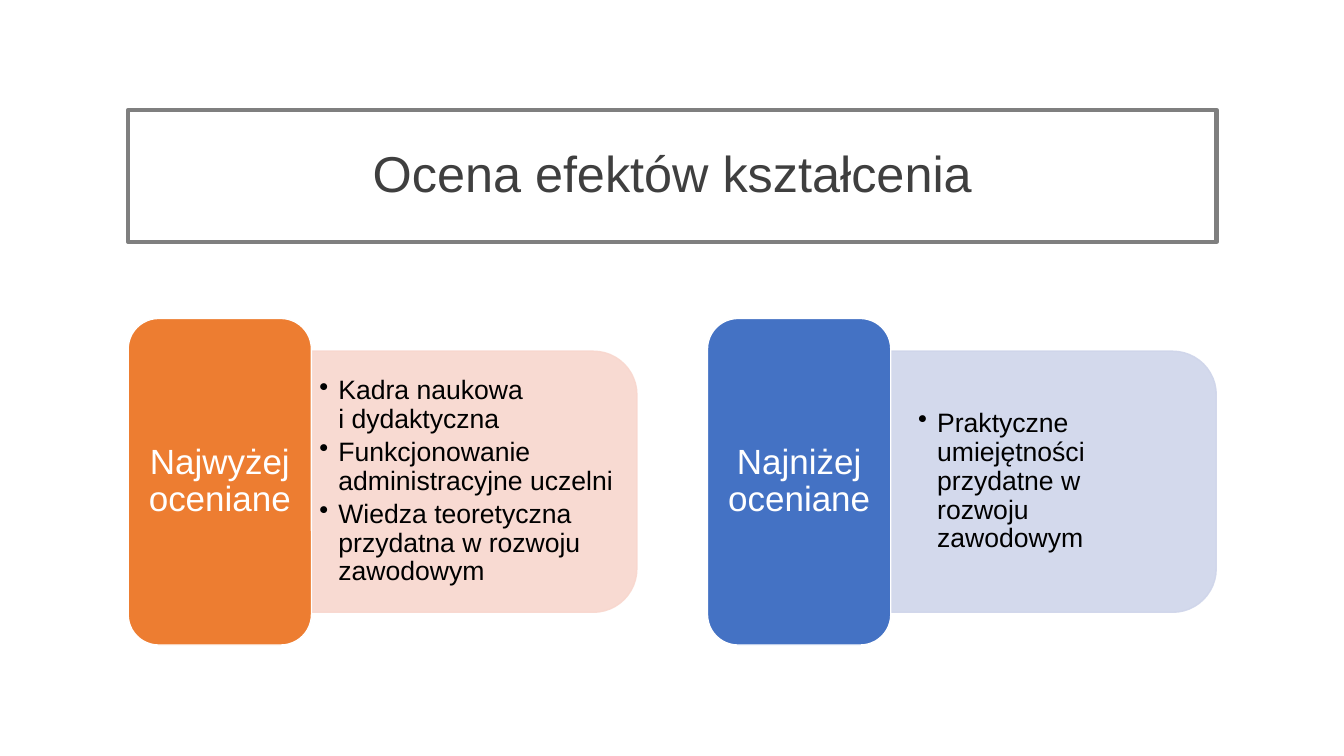
"""Build the slide that compares the highest and lowest rated learning outcomes."""
from lxml import etree
from pptx import Presentation
from pptx.dml.color import RGBColor
from pptx.enum.shapes import MSO_SHAPE
from pptx.enum.text import MSO_ANCHOR, PP_ALIGN
from pptx.oxml.ns import qn
from pptx.util import Cm, Pt

RECTANGLE = MSO_SHAPE.RECTANGLE
ROUNDED = MSO_SHAPE.ROUNDED_RECTANGLE
ROUNDED_TOP = MSO_SHAPE.ROUND_2_SAME_RECTANGLE
MIDDLE = MSO_ANCHOR.MIDDLE
LEFT, CENTER = PP_ALIGN.LEFT, PP_ALIGN.CENTER

TITLE = "Ocena efektów kształcenia"
CARDS = [
    {
        "label": "Najwyżej oceniane",
        "points": [
            "Kadra naukowa\vi dydaktyczna",
            "Funkcjonowanie administracyjne uczelni",
            "Wiedza teoretyczna przydatna w rozwoju zawodowym",
        ],
        "fill": "ED7D31", "tint": "F8D7CE", "inset": (0.2, 0.1),
    },
    {
        "label": "Najniżej oceniane",
        "points": ["Praktyczne umiejętności przydatne w rozwoju zawodowym"],
        "fill": "4472C4", "tint": "CFD5EA", "inset": (0.69, 0.36),
    },
]
THEME = {
    "font": "Arial", "white": "FFFFFF", "black": "000000",
    "title": "3F3F3F", "frame": "7F7F7F", "opacity": 90,
    "title_size": 36, "label_size": 25, "point_size": 19,
}
PAGE_WIDTH, PAGE_HEIGHT = 33.87, 19.05
MARGIN, CARD_STEP, CARD_MIDDLE = 3.23, 14.6, 12.14
TITLE_TOP, TITLE_WIDTH, TITLE_HEIGHT = 2.77, 27.43, 3.33
LABEL_WIDTH, LABEL_HEIGHT = 4.62, 8.23
PANEL_WIDTH, PANEL_HEIGHT = 8.2, 6.58
POINTS_WIDTH, POINTS_HEIGHT = 7.87, 5.94
BULLET_INDENT = 0.48


def add_box(page, kind, left, top, width, height, fill, line, weight=1):
    box = page.shapes.add_shape(kind, Cm(left), Cm(top), Cm(width), Cm(height))
    box.shadow.inherit = False
    box.fill.solid()
    box.fill.fore_color.rgb = RGBColor.from_string(fill)
    box.line.color.rgb = RGBColor.from_string(line)
    box.line.width = Pt(weight)
    return box


def set_opacity(box, percent):
    for color in box._element.spPr.iter(qn("a:srgbClr")):
        etree.SubElement(color, qn("a:alpha")).set("val", str(percent * 1000))


def add_bullet(para):
    properties = para._p.get_or_add_pPr()
    properties.set("marL", str(Cm(BULLET_INDENT)))
    properties.set("indent", str(-Cm(BULLET_INDENT)))
    etree.SubElement(properties, qn("a:buChar")).set("char", "•")


def write(box, texts, size, color, align=CENTER, inset=(0.25, 0.13), after=0, bullet=False):
    frame = box.text_frame
    frame.word_wrap = True
    frame.vertical_anchor = MIDDLE
    frame.margin_left = frame.margin_right = Cm(inset[0])
    frame.margin_top = frame.margin_bottom = Cm(inset[1])
    for index, text in enumerate(texts):
        para = frame.add_paragraph() if index else frame.paragraphs[0]
        para.text = text
        para.alignment = align
        para.line_spacing = 0.9
        para.space_after = Pt(after)
        if bullet:
            add_bullet(para)
        for span in para.runs:
            span.font.name = THEME["font"]
            span.font.size = Pt(size)
            span.font.color.rgb = RGBColor.from_string(color)


def add_card(page, card, left):
    panel_left = left + LABEL_WIDTH
    panel = add_box(page, ROUNDED_TOP,
                    panel_left + (PANEL_WIDTH - PANEL_HEIGHT) / 2,
                    CARD_MIDDLE - PANEL_WIDTH / 2,
                    PANEL_HEIGHT, PANEL_WIDTH, card["tint"], card["tint"])
    panel.rotation = 90
    set_opacity(panel, THEME["opacity"])

    points = page.shapes.add_textbox(
        Cm(panel_left), Cm(CARD_MIDDLE - POINTS_HEIGHT / 2),
        Cm(POINTS_WIDTH), Cm(POINTS_HEIGHT))
    write(points, card["points"], THEME["point_size"], THEME["black"],
          align=LEFT, inset=card["inset"], after=3, bullet=True)

    label = add_box(page, ROUNDED, left, CARD_MIDDLE - LABEL_HEIGHT / 2,
                    LABEL_WIDTH, LABEL_HEIGHT, card["fill"], THEME["white"])
    write(label, [card["label"]], THEME["label_size"], THEME["white"])


def main():
    deck = Presentation()
    deck.slide_width, deck.slide_height = Cm(PAGE_WIDTH), Cm(PAGE_HEIGHT)
    page = deck.slides.add_slide(deck.slide_layouts[6])
    title = add_box(page, RECTANGLE, MARGIN, TITLE_TOP, TITLE_WIDTH, TITLE_HEIGHT,
                    THEME["white"], THEME["frame"], weight=3)
    write(title, [TITLE], THEME["title_size"], THEME["title"])
    for index, card in enumerate(CARDS):
        add_card(page, card, MARGIN + index * CARD_STEP)
    deck.save("out.pptx")


if __name__ == "__main__":
    main()
